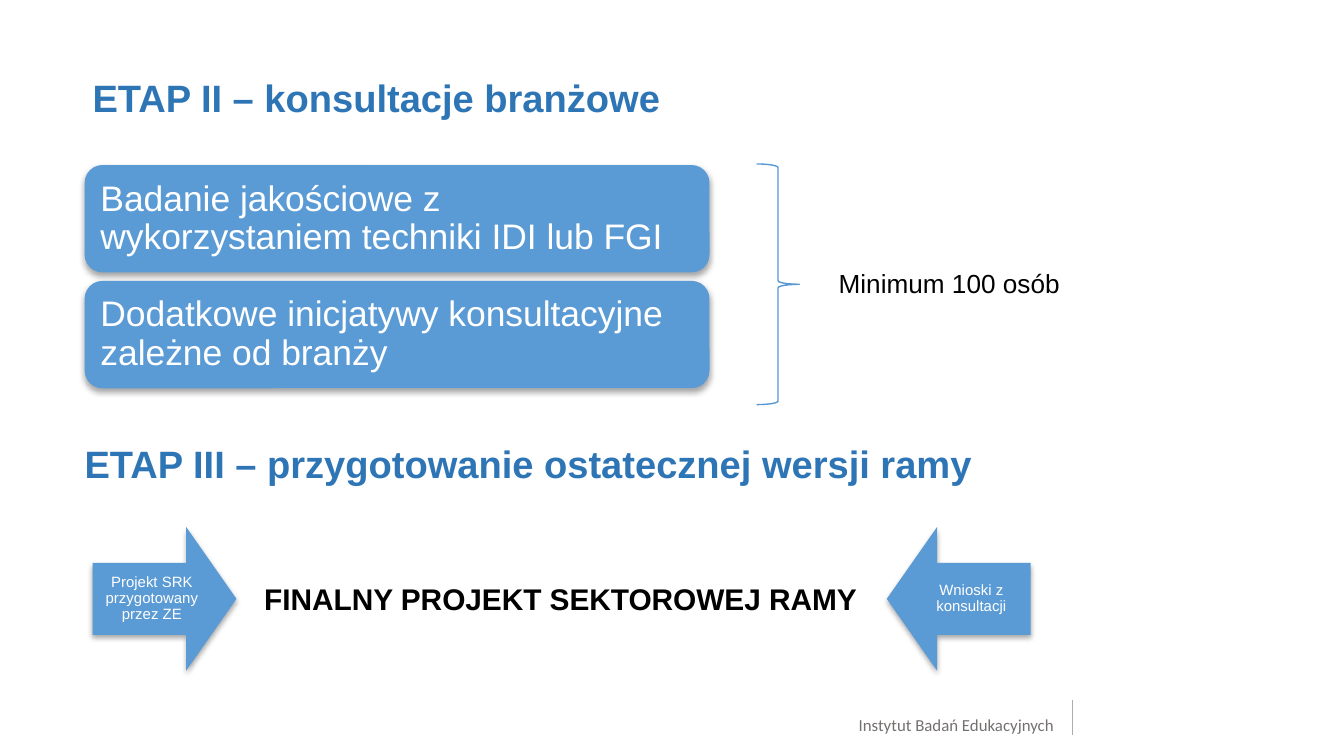
from lxml.etree import SubElement
from pptx import Presentation
from pptx.dml.color import RGBColor
from pptx.enum.shapes import MSO_CONNECTOR, MSO_SHAPE
from pptx.enum.text import MSO_ANCHOR, PP_ALIGN
from pptx.oxml.ns import qn
from pptx.util import Cm, Pt

COLOURS = {
    "heading": "2E75B6",
    "block": "5B9BD5",
    "brace": "5698D3",
    "white": "FFFFFF",
    "black": "000000",
    "footer": "757070",
    "rule": "AEABAB",
}


def colour(name):
    return RGBColor.from_string(COLOURS[name])


def write(box, text, size=14, ink="black", font="Arial", bold=False,
          align=PP_ALIGN.LEFT, anchor=MSO_ANCHOR.TOP, inset=None, spacing=None):
    frame = box.text_frame
    frame.word_wrap = True
    frame.vertical_anchor = anchor
    if inset is not None:
        frame.margin_left = frame.margin_right = Cm(inset)
        frame.margin_top = frame.margin_bottom = Cm(inset)
    para = frame.paragraphs[0]
    para.alignment = align
    if spacing:
        para.line_spacing = spacing
    span = para.add_run()
    span.text = text
    span.font.name = font
    span.font.size = Pt(size)
    span.font.bold = bold
    span.font.color.rgb = colour(ink)


class SlideBuilder:
    def __init__(self, page):
        self.page = page

    def label(self, text, left, top, width, height, **style):
        box = self.page.shapes.add_textbox(Cm(left), Cm(top), Cm(width), Cm(height))
        write(box, text, **style)

    def heading(self, text, left, top):
        self.label(text, left, top, 21.9, 1.47, size=20.4, ink="heading", bold=True, inset=0)

    def block(self, kind, text, left, top, width, height, **style):
        block = self.page.shapes.add_shape(kind, Cm(left), Cm(top), Cm(width), Cm(height))
        block.fill.solid()
        block.fill.fore_color.rgb = colour("block")
        block.line.fill.background()
        self.drop_shadow(block)
        write(block, text, ink="white", anchor=MSO_ANCHOR.MIDDLE, spacing=0.9, **style)
        return block

    def arrow(self, kind, text, left):
        arrow = self.block(kind, text, left, 9.96, 2.72, 2.72,
                           size=8, align=PP_ALIGN.CENTER, inset=0.15)
        arrow.adjustments[0] = 0.5
        arrow.adjustments[1] = 0.35

    def drop_shadow(self, shape):
        shape.shadow.inherit = False
        effects = shape.element.spPr.find(qn("a:effectLst"))
        shadow = SubElement(effects, qn("a:outerShdw"), blurRad=str(Pt(3.1)),
                            dist=str(Pt(1.8)), dir="5400000", rotWithShape="0")
        tint = SubElement(shadow, qn("a:srgbClr"), val=COLOURS["black"])
        SubElement(tint, qn("a:alpha"), val="35000")

    def brace(self, left, top, width, height):
        brace = self.page.shapes.add_shape(
            MSO_SHAPE.RIGHT_BRACE, Cm(left), Cm(top), Cm(width), Cm(height))
        brace.shadow.inherit = False
        brace.fill.background()
        brace.line.color.rgb = colour("brace")
        brace.line.width = Pt(0.75)

    def rule(self, left, top, bottom):
        rule = self.page.shapes.add_connector(
            MSO_CONNECTOR.STRAIGHT, Cm(left), Cm(bottom), Cm(left), Cm(top))
        rule.line.color.rgb = colour("rule")
        rule.line.width = Pt(0.75)
        SubElement(rule.element.spPr, qn("a:effectLst"))


def main():
    deck = Presentation()
    deck.slide_width = Cm(25.4)
    deck.slide_height = Cm(14.29)
    builder = SlideBuilder(deck.slides.add_slide(deck.slide_layouts[6]))

    builder.label("Instytut Badań Edukacyjnych", 15.67, 13.51, 4.24, 0.36, size=9,
                  ink="footer", font="Calibri", align=PP_ALIGN.RIGHT, inset=0)
    builder.rule(20.27, 13.23, 13.89)

    builder.heading("ETAP II – konsultacje branżowe", 1.75, 1.4)
    methods = [
        "Badanie jakościowe z wykorzystaniem techniki IDI lub FGI",
        "Dodatkowe inicjatywy konsultacyjne zależne od branży",
    ]
    for row, method in enumerate(methods):
        builder.block(MSO_SHAPE.ROUNDED_RECTANGLE, method, 1.6, 3.12 + row * 2.19,
                      11.81, 2.03, size=19, inset=0.2)
    builder.brace(14.3, 3.1, 0.81, 4.55)
    builder.label("Minimum 100 osób", 15.6, 4.93, 5.31, 0.86)

    builder.heading("ETAP III – przygotowanie ostatecznej wersji ramy", 1.6, 8.33)
    builder.arrow(MSO_SHAPE.RIGHT_ARROW, "Projekt SRK przygotowany przez ZE", 1.75)
    builder.arrow(MSO_SHAPE.LEFT_ARROW, "Wnioski z konsultacji", 16.76)
    builder.label("FINALNY PROJEKT SEKTOROWEJ RAMY", 4.67, 10.85, 11.86, 0.94,
                  size=16, bold=True, align=PP_ALIGN.CENTER)

    deck.save("out.pptx")


if __name__ == "__main__":
    main()
